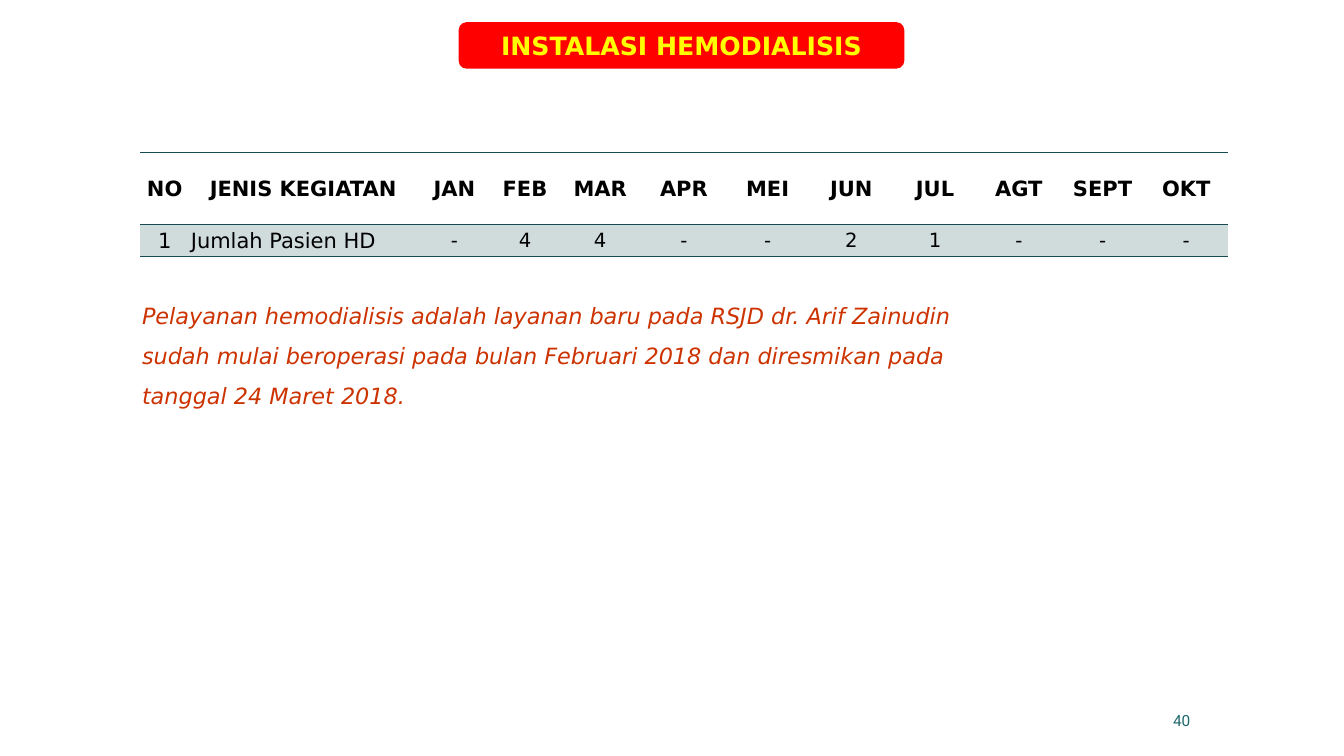
from dataclasses import dataclass

from lxml.etree import SubElement
from pptx import Presentation
from pptx.dml.color import RGBColor as Rgb
from pptx.enum.shapes import MSO_SHAPE as Shape
from pptx.enum.text import MSO_ANCHOR as Anchor, PP_ALIGN as Align
from pptx.oxml.ns import qn
from pptx.util import Cm, Pt

NO_TABLE_STYLE = "{2D5ABB26-0587-4C30-8999-92F81FD0307C}"


@dataclass(frozen=True)
class Theme:
    body_font: str = "DejaVu Sans"
    number_font: str = "Roboto"
    black: str = "000000"
    rule: str = "164B4F"
    row_tint: str = "D0DBDC"
    banner: str = "FF0000"
    banner_text: str = "FFFF00"
    note: str = "CC3300"
    number: str = "1F696F"
    title_size: int = 18
    note_size: int = 16
    table_size: int = 15
    value_size: int = 14
    number_size: int = 11


class SlideBuilder:
    def __init__(self, slide, theme):
        self.slide = slide
        self.theme = theme

    def add_words(self, paragraph, text, size, color, font=None, bold=False,
                  italic=False, align=Align.LEFT):
        paragraph.alignment = align
        run = paragraph.add_run()
        run.text = text
        run.font.name = font or self.theme.body_font
        run.font.size = Pt(size)
        run.font.bold = bold
        run.font.italic = italic
        run.font.color.rgb = Rgb.from_string(color)

    def banner(self, text, left, top, width, height):
        box = self.slide.shapes.add_shape(
            Shape.ROUNDED_RECTANGLE, Cm(left), Cm(top), Cm(width), Cm(height))
        box.shadow.inherit = False
        box.fill.solid()
        box.fill.fore_color.rgb = Rgb.from_string(self.theme.banner)
        box.line.fill.background()
        box.text_frame.vertical_anchor = Anchor.MIDDLE
        self.add_words(box.text_frame.paragraphs[0], text, self.theme.title_size,
                       self.theme.banner_text, bold=True, align=Align.CENTER)

    def text(self, lines, left, top, width, height, spacing=1.0,
             anchor=Anchor.TOP, **style):
        frame = self.slide.shapes.add_textbox(
            Cm(left), Cm(top), Cm(width), Cm(height)).text_frame
        frame.word_wrap = True
        frame.vertical_anchor = anchor
        for index, line in enumerate(lines):
            paragraph = frame.add_paragraph() if index else frame.paragraphs[0]
            paragraph.line_spacing = spacing
            self.add_words(paragraph, line, **style)

    def rule_cell(self, cell, sides):
        properties = cell._tc.get_or_add_tcPr()
        for side in sides:
            line = SubElement(properties, qn(f"a:{side}"), w=str(Pt(1)))
            fill = SubElement(line, qn("a:solidFill"))
            SubElement(fill, qn("a:srgbClr"), val=self.theme.rule)

    def table(self, rows, left, top, widths, heights):
        """Draw a ruled table with a bold header and tinted data rows."""
        theme = self.theme
        table = self.slide.shapes.add_table(
            len(rows), len(widths), Cm(left), Cm(top),
            Cm(sum(widths)), Cm(sum(heights))).table
        table.first_row = table.horz_banding = False
        table._tbl.tblPr.find(qn("a:tableStyleId")).text = NO_TABLE_STYLE
        for column, width in zip(table.columns, widths):
            column.width = Cm(width)
        for row, height in zip(table.rows, heights):
            row.height = Cm(height)
        for r, values in enumerate(rows):
            header = r == 0
            for c, value in enumerate(values):
                cell = table.cell(r, c)
                cell.vertical_anchor = Anchor.MIDDLE
                cell.margin_left = cell.margin_right = cell.margin_top = Cm(0.04)
                cell.margin_bottom = 0
                self.rule_cell(cell, ("lnT", "lnB"))
                if header:
                    cell.fill.background()
                else:
                    cell.fill.solid()
                    cell.fill.fore_color.rgb = Rgb.from_string(theme.row_tint)
                label = header or c < 2
                self.add_words(
                    cell.text_frame.paragraphs[0], value,
                    theme.table_size if label else theme.value_size,
                    theme.black, bold=header,
                    align=Align.LEFT if c == 1 and not header else Align.CENTER)


def main():
    deck = Presentation()
    deck.slide_width, deck.slide_height = Cm(33.87), Cm(19.05)
    theme = Theme()
    page = SlideBuilder(deck.slides.add_slide(deck.slide_layouts[6]), theme)

    months = ["JAN", "FEB", "MAR", "APR", "MEI", "JUN", "JUL", "AGT", "SEPT", "OKT"]
    patients = ["-", "4", "4", "-", "-", "2", "1", "-", "-", "-"]
    page.table(
        [["NO", "JENIS KEGIATAN", *months], ["1", "Jumlah Pasien HD", *patients]],
        3.53, 3.85, [1.24, 5.74, 1.88, 1.68] + [2.11] * 8, [1.8, 0.81])
    page.text(["40"], 22.35, 17.65, 7.9, 1.02, anchor=Anchor.MIDDLE,
              size=theme.number_size, color=theme.number,
              font=theme.number_font, align=Align.RIGHT)
    page.banner("INSTALASI HEMODIALISIS", 11.56, 0.56, 11.23, 1.17)
    page.text(
        ["Pelayanan hemodialisis adalah layanan baru pada RSJD dr. Arif Zainudin",
         "sudah mulai beroperasi pada bulan Februari 2018 dan diresmikan pada "
         "tanggal 24 Maret 2018."],
        3.33, 7.14, 21.59, 3.33, spacing=1.5,
        size=theme.note_size, color=theme.note, italic=True)
    deck.save("out.pptx")


if __name__ == "__main__":
    main()
